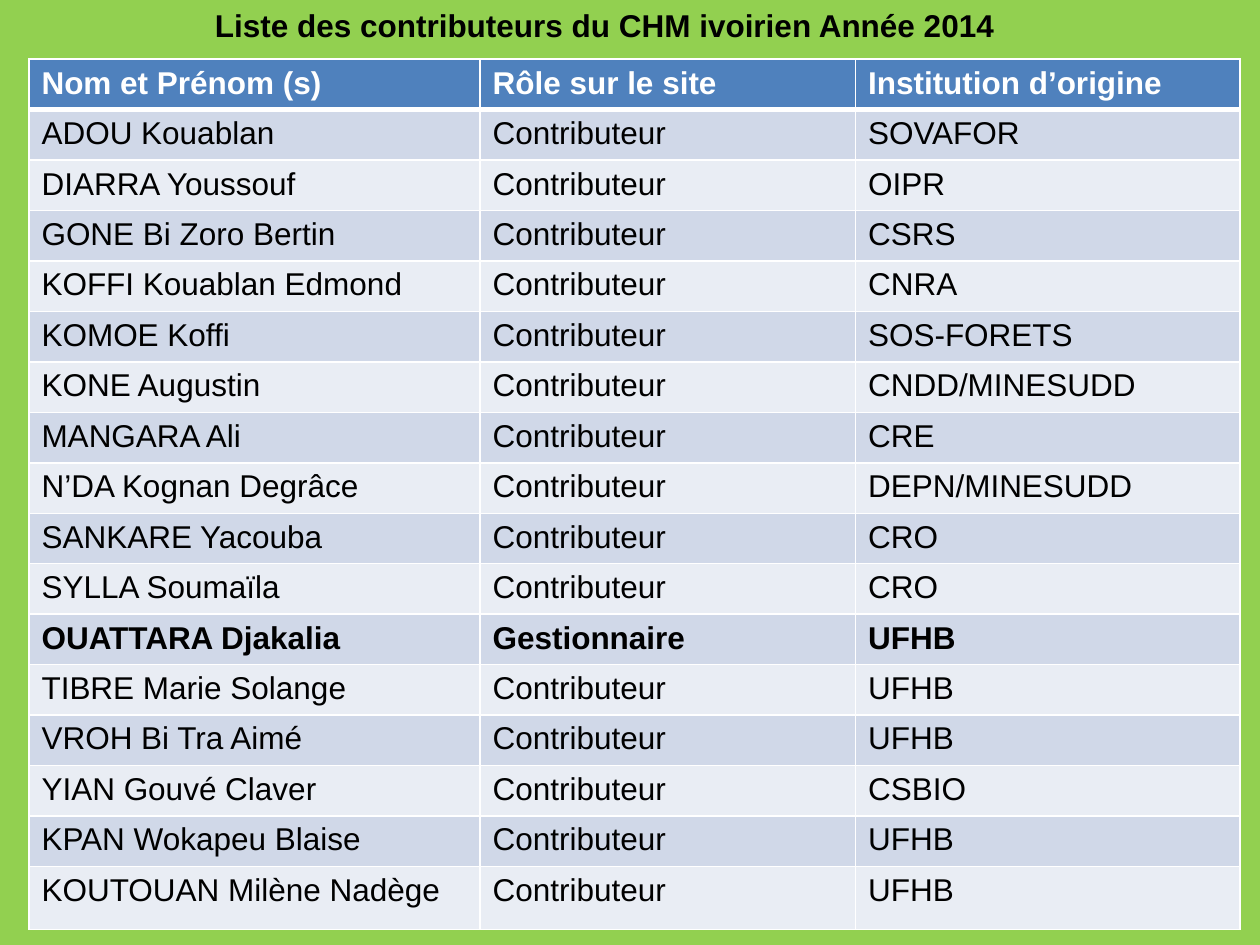
from dataclasses import dataclass

from lxml.etree import SubElement
from pptx import Presentation
from pptx.dml.color import RGBColor
from pptx.enum.text import MSO_ANCHOR, MSO_AUTO_SIZE, PP_ALIGN
from pptx.oxml.ns import qn
from pptx.util import Inches, Pt


@dataclass(frozen=True)
class Theme:
    back: str = "92D050"
    head: str = "4F81BD"
    bands: tuple = ("D0D8E8", "E9EDF4")
    ink: str = "000000"
    white: str = "FFFFFF"
    face: str = "Arial"
    size: int = 18
    thin: int = 1
    thick: int = 3


@dataclass(frozen=True)
class Member:
    name: str
    home: str
    role: str = "Contributeur"
    bold: bool = False


THEME = Theme()
TITLE = "Liste des contributeurs du CHM ivoirien Année 2014"
HEADS = ("Nom et Prénom (s)", "Rôle sur le site", "Institution d’origine")
WIDTHS = (3.58, 2.98, 3.05)
LEFT, TOP, HEIGHT, LAST = 0.23, 0.47, 6.87, 0.5

MEMBERS = (
    Member("ADOU Kouablan", "SOVAFOR"),
    Member("DIARRA Youssouf", "OIPR"),
    Member("GONE Bi Zoro Bertin", "CSRS"),
    Member("KOFFI Kouablan Edmond", "CNRA"),
    Member("KOMOE Koffi", "SOS-FORETS"),
    Member("KONE Augustin", "CNDD/MINESUDD"),
    Member("MANGARA Ali", "CRE"),
    Member("N’DA Kognan Degrâce", "DEPN/MINESUDD"),
    Member("SANKARE Yacouba", "CRO"),
    Member("SYLLA Soumaïla", "CRO"),
    Member("OUATTARA Djakalia", "UFHB", "Gestionnaire", True),
    Member("TIBRE Marie Solange", "UFHB"),
    Member("VROH Bi Tra Aimé", "UFHB"),
    Member("YIAN Gouvé Claver", "CSBIO"),
    Member("KPAN Wokapeu Blaise", "UFHB"),
    Member("KOUTOUAN Milène Nadège", "UFHB"),
)


def write(frame, text: str, color: str, bold: bool) -> None:
    """Put one formatted run in a text frame."""
    run = frame.paragraphs[0].add_run()
    run.text = text
    style = {"name": THEME.face, "size": Pt(THEME.size), "bold": bold}
    for key, value in style.items():
        setattr(run.font, key, value)
    run.font.color.rgb = RGBColor.from_string(color)


def border(cell, top: int, bottom: int) -> None:
    """Draw white lines on the four sides of a cell."""
    sides = {"L": THEME.thin, "R": THEME.thin, "T": top, "B": bottom}
    props = cell._tc.get_or_add_tcPr()
    for side, width in sides.items():
        line = SubElement(props, qn(f"a:ln{side}"), w=str(Pt(width)))
        fill = SubElement(line, qn("a:solidFill"))
        SubElement(fill, qn("a:srgbClr"), val=THEME.white)


def add_row(table, index: int, texts: tuple, bold: bool) -> None:
    """Fill one row; row 0 is the header, the others are banded."""
    head = index == 0
    shade = THEME.head if head else THEME.bands[(index - 1) % 2]
    color = THEME.white if head else THEME.ink
    top = THEME.thick if index == 1 else THEME.thin
    bottom = THEME.thick if head else THEME.thin
    for cell, text in zip(table.rows[index].cells, texts):
        border(cell, top, bottom)
        cell.fill.solid()
        cell.fill.fore_color.rgb = RGBColor.from_string(shade)
        write(cell.text_frame, text, color, bold)


def add_title(slide) -> None:
    """Set the title placeholder above the table."""
    title = slide.shapes.title
    place = {"left": 0.31, "top": 0, "width": 8.98, "height": 0.4}
    for key, value in place.items():
        setattr(title, key, Inches(value))
    frame = title.text_frame
    form = {
        "word_wrap": True,
        "auto_size": MSO_AUTO_SIZE.SHAPE_TO_FIT_TEXT,
        "vertical_anchor": MSO_ANCHOR.TOP,
    }
    for key, value in form.items():
        setattr(frame, key, value)
    frame.paragraphs[0].alignment = PP_ALIGN.CENTER
    write(frame, TITLE, THEME.ink, True)


def add_list(slide) -> None:
    """Build the table of contributors."""
    count = len(MEMBERS) + 1
    table = slide.shapes.add_table(
        count, len(HEADS), Inches(LEFT), Inches(TOP),
        Inches(sum(WIDTHS)), Inches(HEIGHT),
    ).table
    for column, width in zip(table.columns, WIDTHS):
        column.width = Inches(width)
    # Equal rows, with a taller last one
    for row in table.rows:
        row.height = Inches((HEIGHT - LAST) / (count - 1))
    table.rows[count - 1].height = Inches(LAST)

    add_row(table, 0, HEADS, True)
    for index, who in enumerate(MEMBERS, 1):
        add_row(table, index, (who.name, who.role, who.home), who.bold)


def main() -> None:
    deck = Presentation()
    deck.slide_width, deck.slide_height = Inches(10), Inches(7.5)
    slide = deck.slides.add_slide(deck.slide_layouts.get_by_name("Title Only"))
    fill = slide.background.fill
    fill.solid()
    fill.fore_color.rgb = RGBColor.from_string(THEME.back)
    add_list(slide)
    add_title(slide)
    deck.save("out.pptx")


if __name__ == "__main__":
    main()
